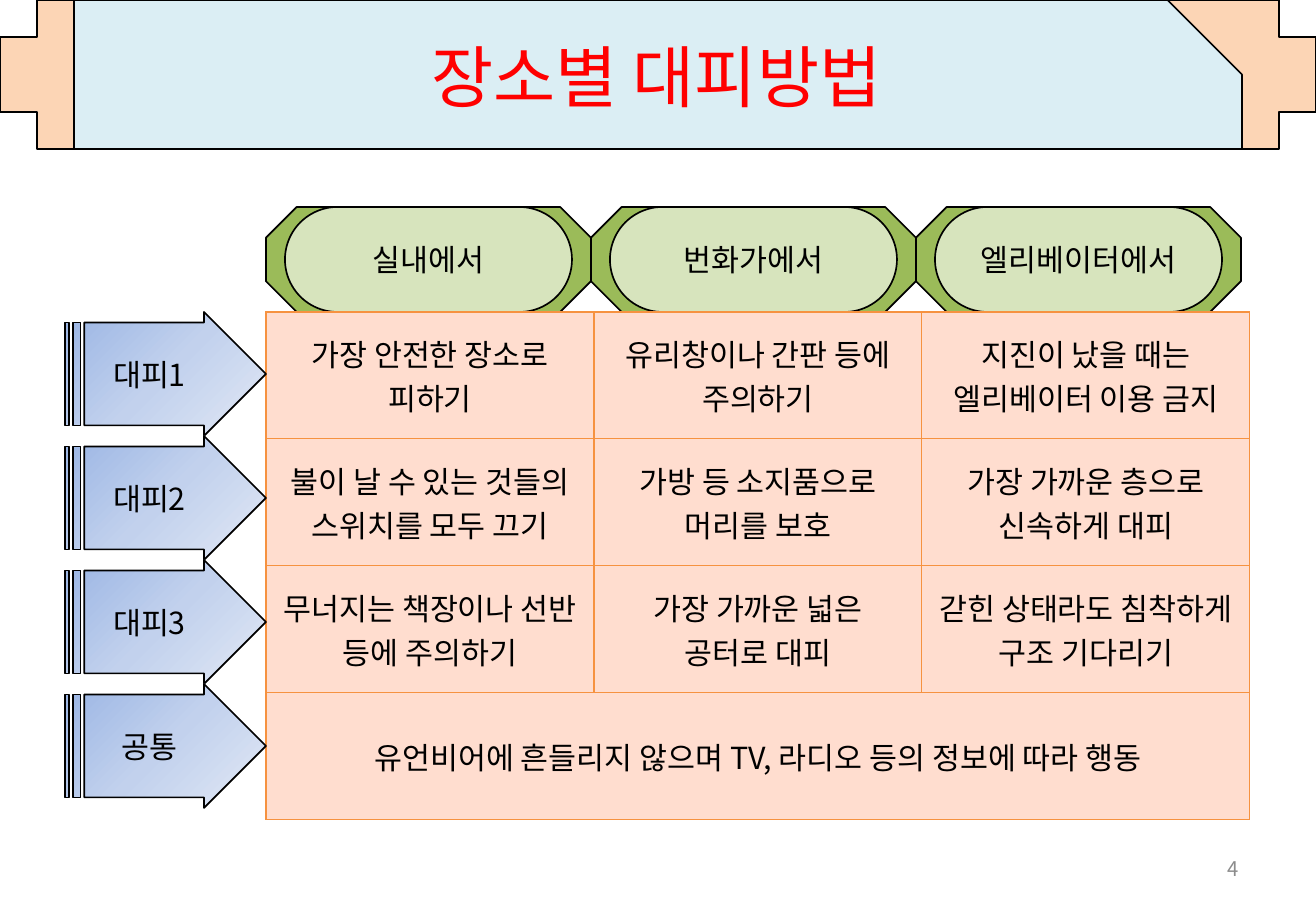
import pptx
import pptx.util
import pptx.dml.color
import pptx.enum.shapes
import pptx.enum.text
import pptx.oxml
import pptx.oxml.ns

SCALE = 914400 / 121.5
FONT = "Noto Sans CJK KR"
KIND = pptx.enum.shapes.MSO_SHAPE
ALIGN = pptx.enum.text.PP_ALIGN
MIDDLE = pptx.enum.text.MSO_ANCHOR.MIDDLE
HUES = {
    "black": "000000", "red": "FF0000", "gray": "8C8C8C",
    "peach": "FCD5B5", "sky": "DBEEF4",
    "green": "9BBB59", "lime": "D7E4BD",
    "cell": "FFDDCF", "edge": "F69240",
    "deep": "9AB5E4", "mid": "C2D1ED", "pale": "E1E8F5",
}
PLACES = ["실내에서", "번화가에서", "엘리베이터에서"]
STEPS = ["대피1", "대피2", "대피3", "공통"]
# Each cell is a list of paragraphs
CELLS = [
    [["가장 안전한 장소로", "피하기"],
     ["유리창이나 간판 등에 주의하기"],
     ["지진이 났을 때는 엘리베이터 이용 금지"]],
    [["불이 날 수 있는 것들의 스위치를 모두 끄기"],
     ["가방 등 소지품으로", "머리를 보호"],
     ["가장 가까운 층으로", "신속하게 대피"]],
    [["무너지는 책장이나 선반 등에 주의하기"],
     ["가장 가까운 넓은", "공터로 대피"],
     ["갇힌 상태라도 침착하게 구조 기다리기"]],
    [["유언비어에 흔들리지 않으며 TV, 라디오 등의 정보에 따라 행동"]],
]
LEFT, TOP = 266, 312


def px(num):
    return pptx.util.Emu(round(num * SCALE))


def box(*nums):
    return [px(num) for num in nums]


def color(name):
    return pptx.dml.color.RGBColor.from_string(HUES[name])


def write(frame, lines, size=18, hue="black", align=ALIGN.CENTER):
    frame.word_wrap = True
    for i, line in enumerate(lines):
        para = frame.add_paragraph() if i else frame.paragraphs[0]
        para.alignment = align
        run = para.add_run()
        run.text = line
        run.font.size = pptx.util.Pt(size)
        run.font.name = FONT
        run.font.color.rgb = color(hue)
        # Korean glyphs take the East Asian font
        east = pptx.oxml.parse_xml(
            f'<a:ea {pptx.oxml.ns.nsdecls("a")} typeface="{FONT}"/>')
        run._r.get_or_add_rPr().append(east)


def draw(slide, kind, area, fill, text=None, adjust=()):
    shape = slide.shapes.add_shape(kind, *box(*area))
    shape.shadow.inherit = False
    shape.fill.solid()
    shape.fill.fore_color.rgb = color(fill)
    shape.line.color.rgb = color("black")
    shape.line.width = pptx.util.Pt(1)
    for i, value in enumerate(adjust):
        shape.adjustments[i] = value
    if text:
        shape.text_frame.vertical_anchor = MIDDLE
        write(shape.text_frame, [text])
    return shape


def shade(shape):
    # Radial gradient spreading from the top left corner
    stops = "".join(
        f'<a:gs pos="{i * 50000}"><a:srgbClr val="{HUES[name]}"/></a:gs>'
        for i, name in enumerate(["deep", "mid", "pale"]))
    grad = pptx.oxml.parse_xml(
        f'<a:gradFill {pptx.oxml.ns.nsdecls("a")}><a:gsLst>{stops}</a:gsLst>'
        '<a:path path="circle"><a:fillToRect r="100000" b="100000"/></a:path>'
        '</a:gradFill>')
    props = shape.element.spPr
    props.replace(props.find(pptx.oxml.ns.qn("a:solidFill")), grad)


def border(cell):
    props = cell._tc.get_or_add_tcPr()
    for side in "LRTB":
        props.append(pptx.oxml.parse_xml(
            f'<a:ln{side} {pptx.oxml.ns.nsdecls("a")} w="9525"><a:solidFill>'
            f'<a:srgbClr val="{HUES["edge"]}"/></a:solidFill></a:ln{side}>'))


def grid(slide):
    rows, cols = len(CELLS), len(PLACES)
    area = box(LEFT, TOP, 328 * cols, 127 * rows)
    table = slide.shapes.add_table(rows, cols, *area).table
    table.first_row = table.horz_banding = False
    for col in table.columns:
        col.width = px(328)
    for row in table.rows:
        row.height = px(127)
    for cell in table.iter_cells():
        border(cell)
        cell.fill.solid()
        cell.fill.fore_color.rgb = color("cell")
        cell.vertical_anchor = MIDDLE
    table.cell(rows - 1, 0).merge(table.cell(rows - 1, cols - 1))
    for r, row in enumerate(CELLS):
        for c, lines in enumerate(row):
            write(table.cell(r, c).text_frame, lines)


def head(slide):
    draw(slide, KIND.CROSS, (0, 0, 1316, 149), "peach")
    draw(slide, KIND.SNIP_1_RECTANGLE, (74, 0, 1168, 149), "sky",
         adjust=[0.5])
    title = slide.shapes.title
    title.left, title.top, title.width, title.height = box(64, 0, 1185, 152)
    title.text_frame.vertical_anchor = MIDDLE
    write(title.text_frame, ["장소별 대피방법"], 40, "red")
    # Bring the title in front of the banner
    title.element.getparent().append(title.element)


def main():
    deck = pptx.Presentation()
    deck.slide_width, deck.slide_height = box(1316, 911)
    slide = deck.slides.add_slide(deck.slide_layouts[5])

    # Title banner
    head(slide)

    # Column tabs
    for i in range(len(PLACES)):
        draw(slide, KIND.OCTAGON, (LEFT + 325 * i, 207, 325, 105), "green")
    for i, place in enumerate(PLACES):
        draw(slide, KIND.ROUNDED_RECTANGLE,
             (LEFT + 19 + 325 * i, 207, 287, 105), "lime", place, [0.5])

    # Table of actions
    grid(slide)

    # Row arrows
    for i, step in enumerate(STEPS):
        shade(draw(slide, KIND.STRIPED_RIGHT_ARROW,
                   (65, TOP + 124 * i, 201, 124), "deep", step, [0.83, 0.5]))

    # Page number
    page = slide.shapes.add_textbox(*box(943, 844, 308, 49)).text_frame
    page.vertical_anchor = MIDDLE
    write(page, ["4"], 12, "gray", ALIGN.RIGHT)

    deck.save("out.pptx")


if __name__ == "__main__":
    main()
